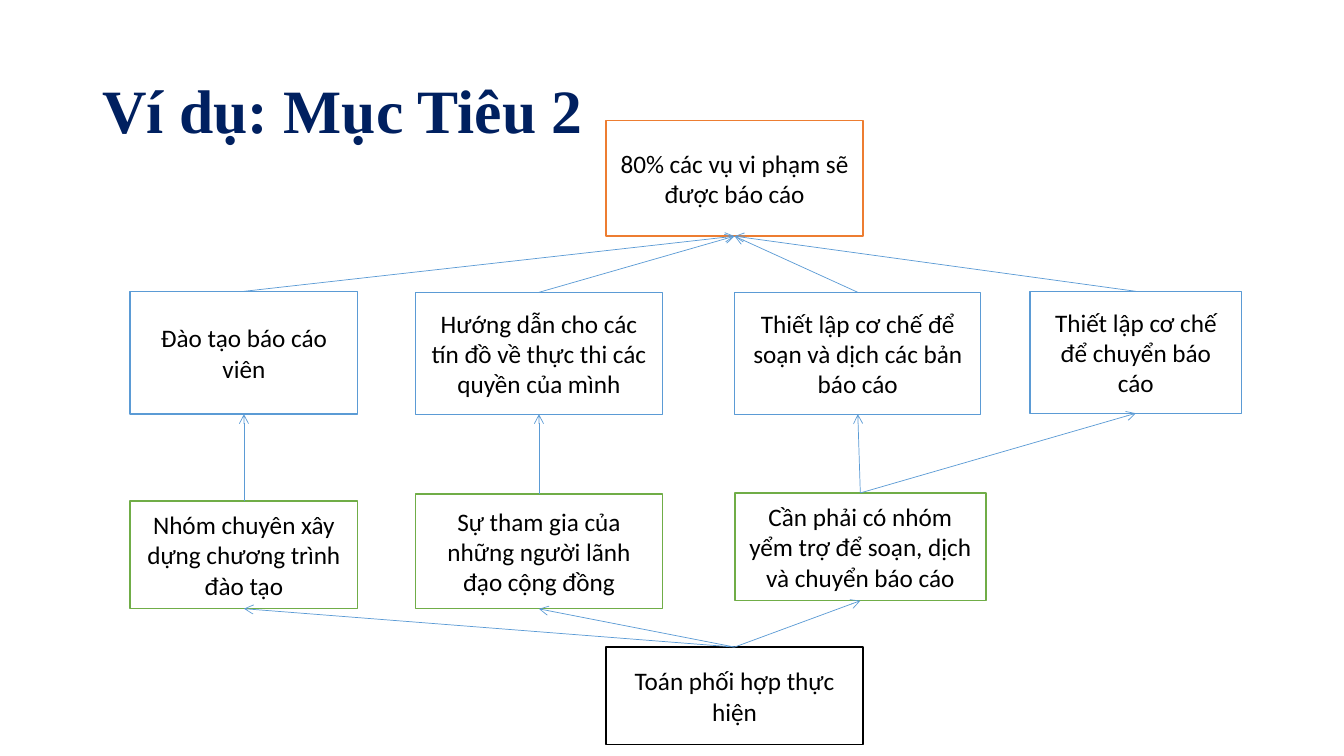
"""Build a slide with a tree of goals, tasks, needs and the team behind them."""
from dataclasses import dataclass

import pptx
import pptx.dml.color
import pptx.enum.shapes
import pptx.enum.text
import pptx.oxml
import pptx.oxml.ns
import pptx.util

Pt = pptx.util.Pt
TOP, BOTTOM = 0, 2


@dataclass(frozen=True)
class Theme:
    navy: str = "002060"
    orange: str = "ED7D31"
    blue: str = "5B9BD5"
    green: str = "70AD47"
    black: str = "000000"
    white: str = "FFFFFF"
    head: str = "Times New Roman"
    body: str = "Calibri"
    large: float = 44
    small: float = 18
    edge: float = 1
    thin: float = 0.5


THEME = Theme()


def paint(code):
    """Turn a hex code into a colour."""
    return pptx.dml.color.RGBColor.from_string(code)


def write(frame, text, face, size, color, align, bold=False):
    """Put one styled run into a text frame."""
    frame.word_wrap = True
    frame.auto_size = pptx.enum.text.MSO_AUTO_SIZE.NONE
    frame.vertical_anchor = pptx.enum.text.MSO_ANCHOR.MIDDLE
    para = frame.paragraphs[0]
    para.alignment = align
    run = para.add_run()
    run.text = text
    run.font.name = face
    run.font.size = Pt(size)
    run.font.bold = bold
    run.font.color.rgb = paint(color)
    return para


def add_title(slide, text):
    """Place and fill the title."""
    title = slide.shapes.title
    title.left, title.top = Pt(66), Pt(28.8)
    title.width, title.height = Pt(828), Pt(104.4)
    para = write(title.text_frame, text, THEME.head, THEME.large, THEME.navy,
                 pptx.enum.text.PP_ALIGN.LEFT, True)
    para.line_spacing = 0.9


def add_box(slide, text, color, left, top, width, height):
    """Draw a white box with a coloured edge."""
    box = slide.shapes.add_shape(pptx.enum.shapes.MSO_SHAPE.RECTANGLE,
                                 Pt(left), Pt(top), Pt(width), Pt(height))
    box.shadow.inherit = False
    box.fill.solid()
    box.fill.fore_color.rgb = paint(THEME.white)
    box.line.color.rgb = paint(color)
    box.line.width = Pt(THEME.edge)
    write(box.text_frame, text, THEME.body, THEME.small, THEME.black,
          pptx.enum.text.PP_ALIGN.CENTER)
    return box


def add_arrow(slide, low, high):
    """Join the top of one box to the bottom of a higher one."""
    arrow = slide.shapes.add_connector(
        pptx.enum.shapes.MSO_CONNECTOR.STRAIGHT, 0, 0, 0, 0)
    arrow.begin_connect(low, TOP)
    arrow.end_connect(high, BOTTOM)
    arrow.line.color.rgb = paint(THEME.blue)
    arrow.line.width = Pt(THEME.thin)
    tip = pptx.oxml.parse_xml(
        f'<a:tailEnd {pptx.oxml.ns.nsdecls("a")} type="arrow"/>')
    arrow.line._get_or_add_ln().append(tip)
    flat = pptx.oxml.parse_xml(f'<a:effectLst {pptx.oxml.ns.nsdecls("a")}/>')
    arrow._element.spPr.append(flat)


def main():
    """Build and save the slide."""
    deck = pptx.Presentation()
    deck.slide_width, deck.slide_height = Pt(960), Pt(540)
    slide = deck.slides.add_slide(deck.slide_layouts[5])
    add_title(slide, "Ví dụ: Mục Tiêu 2")

    goal = add_box(slide, "80% các vụ vi phạm sẽ được báo cáo",
                   THEME.orange, 432.9, 85.9, 183.6, 82.8)
    tasks = [add_box(slide, text, THEME.blue, *place) for text, *place in (
        ("Đào tạo báo cáo viên", 92.9, 208.1, 162.7, 87.8),
        ("Hướng dẫn cho các tín đồ về thực thi các quyền của mình",
         296.8, 208.8, 176.4, 87.1),
        ("Thiết lập cơ chế để soạn và dịch các bản báo cáo",
         524.9, 208.8, 175.7, 87.1),
        ("Thiết lập cơ chế để chuyển báo cáo", 735.8, 208.1, 151.2, 87.1),
    )]
    needs = [add_box(slide, text, THEME.green, *place) for text, *place in (
        ("Nhóm chuyên xây dựng chương trình đào tạo",
         92.9, 357.8, 162.7, 77),
        ("Sự tham gia của những người lãnh đạo cộng đồng",
         296.8, 352.8, 176.4, 82.1),
        ("Cần phải có nhóm yểm trợ để soạn, dịch và chuyển báo cáo",
         524.9, 352.1, 179.3, 77),
    )]
    team = add_box(slide, "Toán phối hợp thực hiện",
                   THEME.black, 432.9, 462.2, 183.6, 69.8)

    for task in tasks:
        add_arrow(slide, task, goal)
    for need, task in zip(needs + needs[-1:], tasks):
        add_arrow(slide, need, task)
    for need in needs:
        add_arrow(slide, team, need)
    deck.save("out.pptx")


if __name__ == "__main__":
    main()
